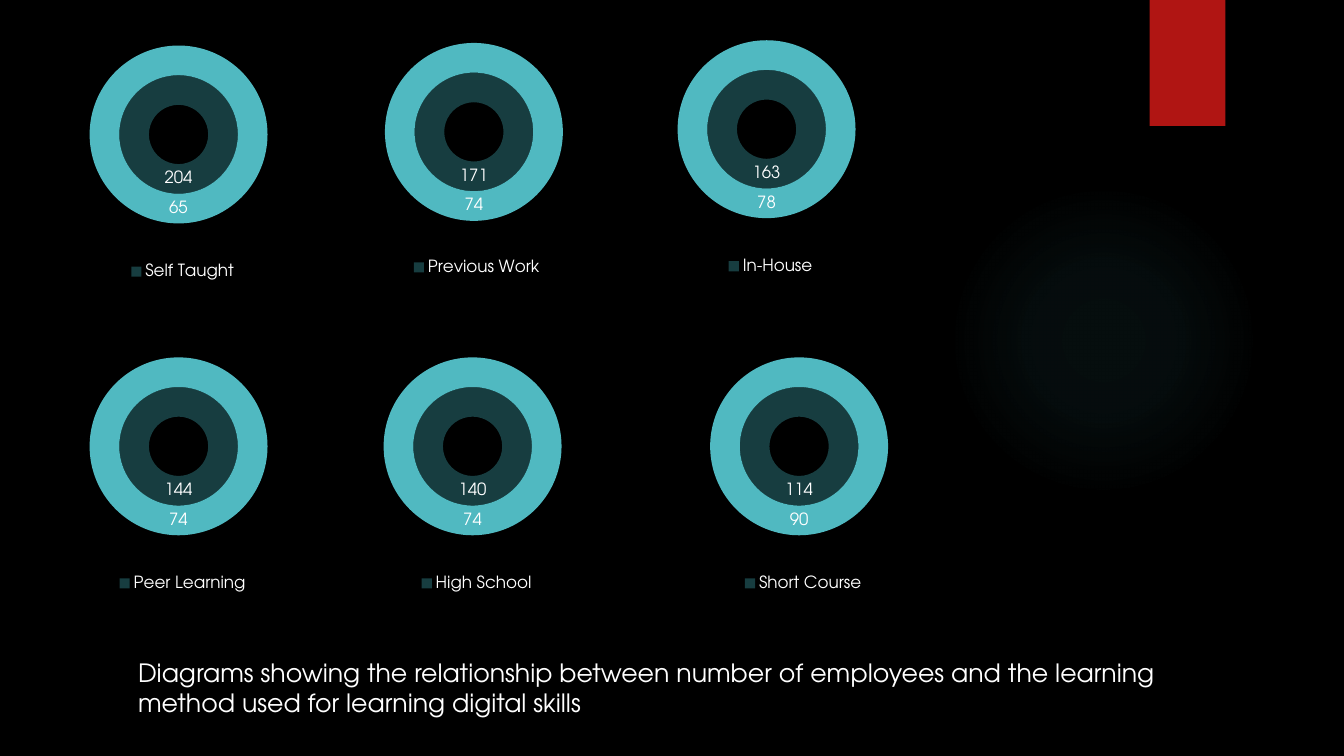
from dataclasses import dataclass

from lxml import etree
from pptx import Presentation
from pptx import util as u
from pptx.chart.data import CategoryChartData
from pptx.dml.color import RGBColor
from pptx.enum import chart as charts
from pptx.enum import shapes, text
from pptx.oxml import parse_xml
from pptx.oxml.ns import nsdecls, qn


@dataclass(frozen=True)
class Theme:
    font: str = "TeX Gyre Adventor"
    background: str = "000000"
    ink: str = "FFFFFF"
    accent: str = "B01513"
    inner: str = "173D40"
    outer: str = "50B9C1"
    chart_size: int = 10
    label_size: int = 12
    caption_size: int = 18


THEME = Theme()
PAGE = (1280, 720)
CHART_SIZE = (250, 262)
RING_PLOT = {"x": 0.144, "y": 0.135, "w": 0.681, "h": 0.647}
SHIFTED_PLOT = {**RING_PLOT, "x": 0.149, "y": 0.141}
LOWER_ROW = 305
METHODS = [
    ("Self Taught", 204, 65, 49, 8, RING_PLOT),
    ("Previous Work", 171, 74, 329, 4, SHIFTED_PLOT),
    ("In-House", 163, 78, 609, 3, RING_PLOT),
    ("Peer Learning", 144, 74, 49, LOWER_ROW, RING_PLOT),
    ("High School", 140, 74, 329, LOWER_ROW, RING_PLOT),
    ("Short Course", 114, 90, 640, LOWER_ROW, RING_PLOT),
]
CAPTION = (
    "Diagrams showing the relationship between number of employees "
    "and the learning method used for learning digital skills"
)


def px(*lengths):
    return [u.Emu(length * 9525) for length in lengths]


def rgb(value):
    return RGBColor.from_string(value)


def set_font(font, size):
    for name, value in {"name": THEME.font, "size": u.Pt(size)}.items():
        setattr(font, name, value)
    font.color.rgb = rgb(THEME.ink)


def add_plain_shape(page, kind, box, color):
    shape = page.shapes.add_shape(kind, *px(*box))
    shape.shadow.inherit = False
    shape.fill.solid()
    shape.fill.fore_color.rgb = rgb(color)
    shape.line.fill.background()
    return shape


def add_backdrop(page):
    page.background.fill.solid()
    page.background.fill.fore_color.rgb = rgb(THEME.background)
    glow = add_plain_shape(
        page, shapes.MSO_SHAPE.OVAL, (903, 176, 296, 296), THEME.outer
    )
    stops = "".join(
        f'<a:gs pos="{place * 1000}"><a:srgbClr val="{THEME.outer}">'
        f'<a:alpha val="{alpha * 1000}"/></a:srgbClr></a:gs>'
        for place, alpha in ((0, 7), (36, 6), (69, 0))
    )
    gradient = parse_xml(
        f'<a:gradFill {nsdecls("a")} rotWithShape="1"><a:gsLst>{stops}</a:gsLst>'
        '<a:path path="circle">'
        '<a:fillToRect l="50000" t="50000" r="50000" b="50000"/>'
        "</a:path></a:gradFill>"
    )
    properties = glow.element.spPr
    properties.replace(properties.find(qn("a:solidFill")), gradient)
    add_plain_shape(page, shapes.MSO_SHAPE.RECTANGLE, (1095, 0, 72, 120), THEME.accent)


def place_plot(chart, plot_box):
    area = chart.element.find(f'.//{qn("c:plotArea")}')
    for old in area.findall(qn("c:layout")):
        area.remove(old)
    layout = etree.Element(qn("c:layout"))
    manual = etree.SubElement(layout, qn("c:manualLayout"))
    settings = {"layoutTarget": "inner", "xMode": "edge", "yMode": "edge", **plot_box}
    for name, value in settings.items():
        etree.SubElement(manual, qn(f"c:{name}"), val=str(value))
    area.insert(0, layout)


def add_method_chart(page, box, method, inner, outer, plot_box):
    data = CategoryChartData()
    data.categories = [method]
    data.add_series("Series 1", [inner])
    data.add_series("Series 2", [outer])
    chart = page.shapes.add_chart(
        charts.XL_CHART_TYPE.DOUGHNUT, *px(*box), data
    ).chart
    set_font(chart.font, THEME.chart_size)
    chart.has_title = False
    chart.has_legend = True
    chart.legend.position = charts.XL_LEGEND_POSITION.BOTTOM
    chart.legend.include_in_layout = False
    set_font(chart.legend.font, THEME.label_size)
    plot = chart.plots[0]
    plot.vary_by_categories = True
    for ring, color in zip(plot.series, (THEME.inner, THEME.outer)):
        look = ring.points[0].format
        look.fill.solid()
        look.fill.fore_color.rgb = rgb(color)
        look.line.fill.background()
        ring.data_labels.show_value = True
        set_font(ring.data_labels.font, THEME.label_size)
    place_plot(chart, plot_box)


def add_caption(page, box):
    frame = page.shapes.add_textbox(*px(*box)).text_frame
    frame.word_wrap = True
    frame.auto_size = text.MSO_AUTO_SIZE.SHAPE_TO_FIT_TEXT
    span = frame.paragraphs[0].add_run()
    span.text = CAPTION
    set_font(span.font, THEME.caption_size)


def main():
    deck = Presentation()
    deck.slide_width, deck.slide_height = px(*PAGE)
    page = deck.slides.add_slide(deck.slide_layouts[6])
    add_backdrop(page)
    for method, inner, outer, left, top, plot_box in METHODS:
        add_method_chart(
            page, (left, top, *CHART_SIZE), method, inner, outer, plot_box
        )
    add_caption(page, (122, 621, 988, 99))
    deck.save("out.pptx")


if __name__ == "__main__":
    main()
